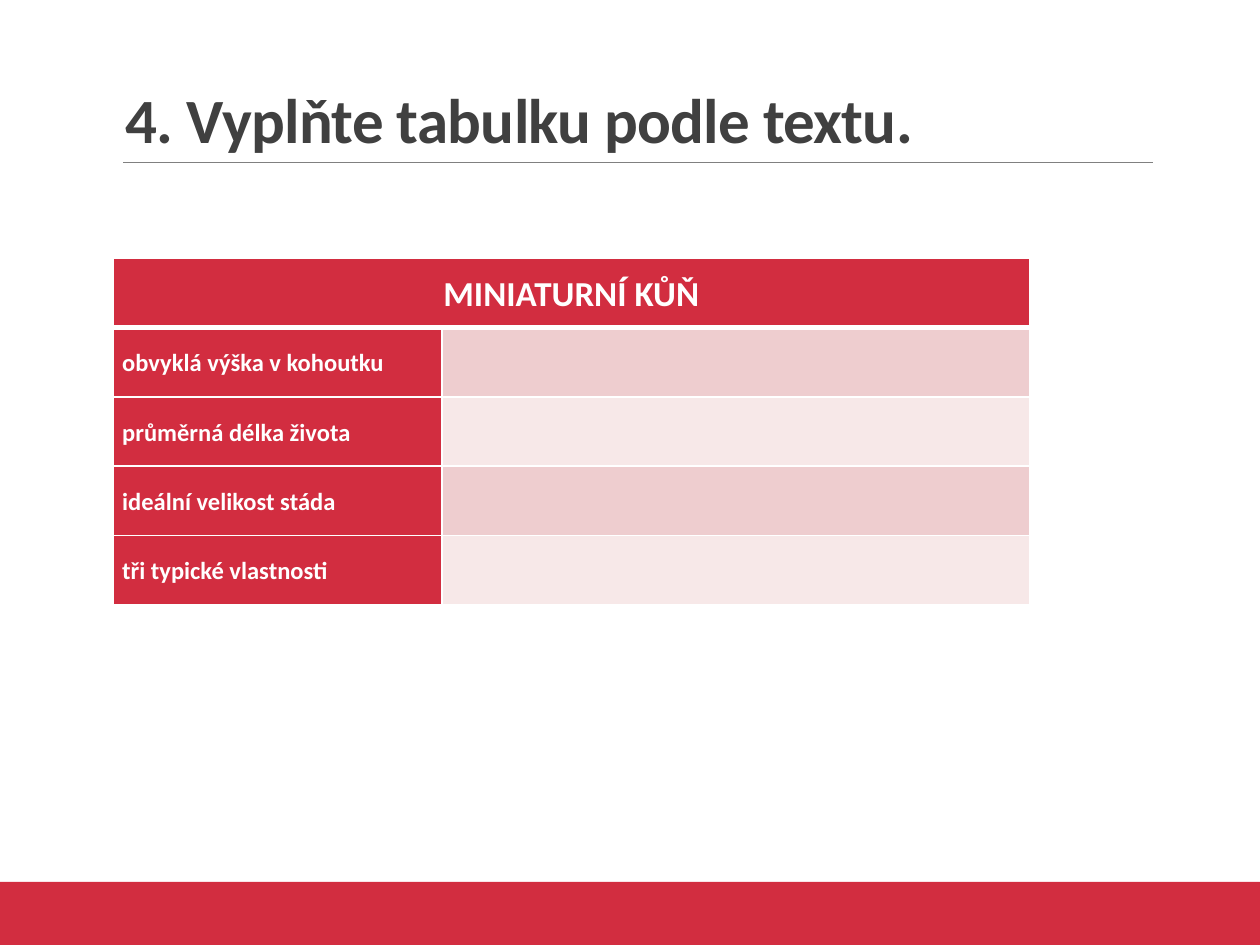
import pptx
import pptx.dml.color
import pptx.enum.shapes
import pptx.enum.text
import pptx.oxml
import pptx.oxml.ns
import pptx.util
from lxml import etree
from pptx.util import Inches

COLORS = {
    "red": "D22D40",
    "pink": "EECDCF",
    "pale": "F7E8E8",
    "white": "FFFFFF",
    "title": "404040",
    "rule": "808080",
}
FONT = "Calibri"
HEADING = "MINIATURNÍ KŮŇ"
QUESTIONS = [
    "obvyklá výška v kohoutku",
    "průměrná délka života",
    "ideální velikost stáda",
    "tři typické vlastnosti",
]
COLUMN_WIDTHS = [2.61, 4.66]
ROW_HEIGHT = 0.55


def rgb(name):
    return pptx.dml.color.RGBColor.from_string(COLORS[name])


def write(frame, text, size, color, spacing):
    """Put one bold paragraph in a text frame and return its run."""
    frame.text = text
    paragraph = frame.paragraphs[0]
    paragraph.line_spacing = spacing
    run = paragraph.runs[0]
    run.font.name = FONT
    run.font.size = pptx.util.Pt(size)
    run.font.bold = True
    run.font.color.rgb = rgb(color)
    return run


def add_footer_band(slide):
    band = slide.shapes.add_shape(
        pptx.enum.shapes.MSO_SHAPE.RECTANGLE,
        Inches(0), Inches(7), Inches(10), Inches(0.5))
    band.shadow.inherit = False
    band.fill.solid()
    band.fill.fore_color.rgb = rgb("red")
    band.line.fill.background()


def add_title_rule(slide):
    rule = slide.shapes.add_connector(
        pptx.enum.shapes.MSO_CONNECTOR.STRAIGHT,
        Inches(0.98), Inches(1.29), Inches(9.15), Inches(1.29))
    rule.line.color.rgb = rgb("rule")
    rule.line.width = pptx.util.Pt(0.5)
    etree.SubElement(rule._element.spPr, pptx.oxml.ns.qn("a:effectLst"))


def add_title(slide, text):
    title = slide.shapes.add_textbox(
        Inches(0.9), Inches(0.29), Inches(8.25), Inches(1))
    frame = title.text_frame
    frame.word_wrap = True
    frame.vertical_anchor = pptx.enum.text.MSO_ANCHOR.BOTTOM
    run = write(frame, text, 36, "title", 0.85)
    run._r.get_or_add_rPr().set("spc", "-40")


def style_cell(cell, fill, bottom=1):
    """Give a cell white borders (widths in points) and a plain fill."""
    properties = cell._tc.get_or_add_tcPr()
    for side, width in (("L", 1), ("R", 1), ("T", 1), ("B", bottom)):
        border = etree.SubElement(
            properties, pptx.oxml.ns.qn(f"a:ln{side}"),
            w=str(pptx.util.Pt(width)))
        solid = etree.SubElement(border, pptx.oxml.ns.qn("a:solidFill"))
        etree.SubElement(
            solid, pptx.oxml.ns.qn("a:srgbClr"), val=COLORS["white"])
    cell.fill.solid()
    cell.fill.fore_color.rgb = rgb(fill)


def label_cell(cell, text, size):
    cell.margin_left = cell.margin_right = Inches(0.07)
    cell.margin_top = cell.margin_bottom = 0
    cell.vertical_anchor = pptx.enum.text.MSO_ANCHOR.MIDDLE
    write(cell.text_frame, text, size, "white", 1.07)


def add_worksheet(slide):
    row_count = len(QUESTIONS) + 1
    table = slide.shapes.add_table(
        row_count, len(COLUMN_WIDTHS), Inches(0.9), Inches(2.05),
        Inches(sum(COLUMN_WIDTHS)), Inches(ROW_HEIGHT * row_count)).table
    for column, width in zip(table.columns, COLUMN_WIDTHS):
        column.width = Inches(width)
    for row in table.rows:
        row.height = Inches(ROW_HEIGHT)

    heading = table.cell(0, 0)
    heading.merge(table.cell(0, 1))
    for cell in table.rows[0].cells:
        style_cell(cell, "red", bottom=3)
    label_cell(heading, HEADING, 20)
    heading.text_frame.paragraphs[0].alignment = pptx.enum.text.PP_ALIGN.CENTER

    for index, question in enumerate(QUESTIONS, start=1):
        label, answer = table.cell(index, 0), table.cell(index, 1)
        style_cell(label, "red")
        label_cell(label, question, 14)
        style_cell(answer, "pink" if index % 2 else "pale")
    # The thick line under the heading is shared with the first row.
    for cell in table.rows[1].cells:
        top = cell._tc.tcPr.find(pptx.oxml.ns.qn("a:lnT"))
        top.set("w", str(pptx.util.Pt(3)))


def main():
    presentation = pptx.Presentation()
    presentation.slide_width = Inches(10)
    presentation.slide_height = Inches(7.5)
    slide = presentation.slides.add_slide(presentation.slide_layouts[6])
    add_footer_band(slide)
    add_title_rule(slide)
    add_title(slide, "4. Vyplňte tabulku podle textu.")
    add_worksheet(slide)
    presentation.save("out.pptx")


if __name__ == "__main__":
    main()
